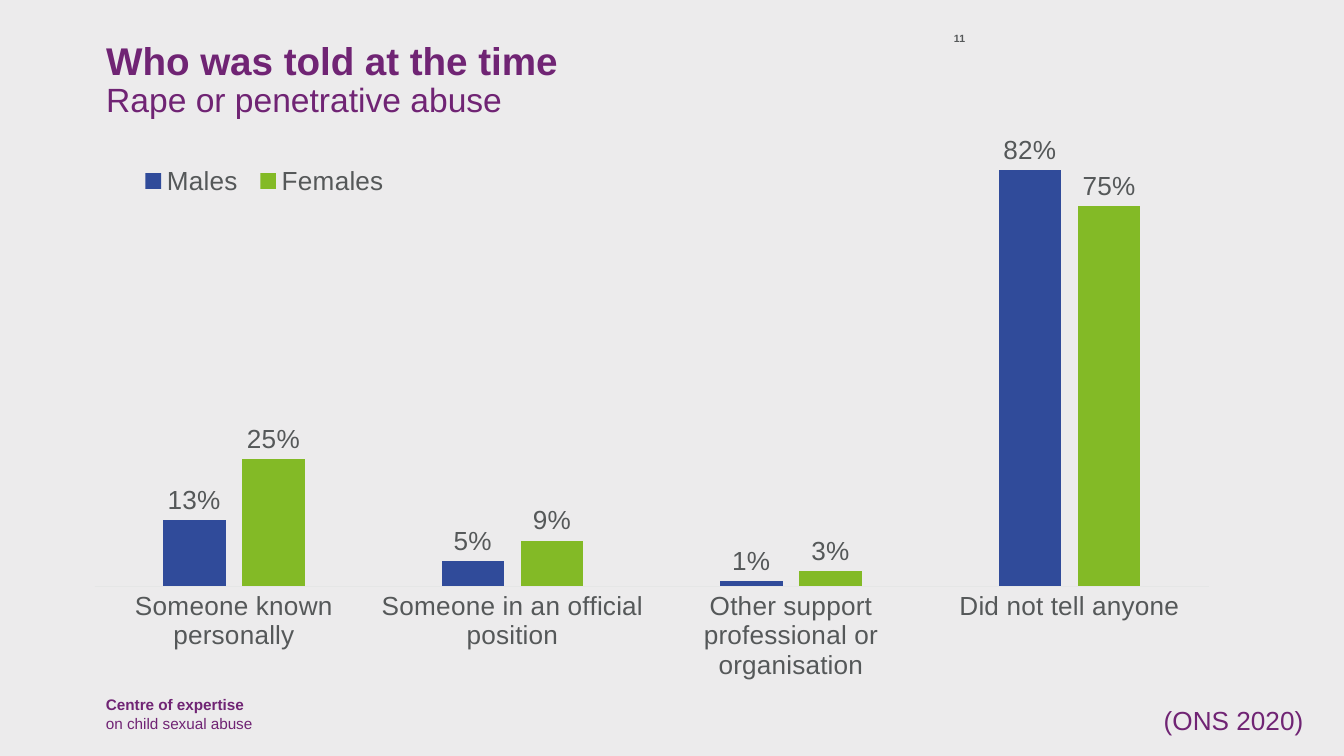
from lxml.etree import SubElement
from pptx import Presentation
from pptx.chart.data import CategoryChartData
from pptx.dml.color import RGBColor
from pptx.enum.chart import XL_CHART_TYPE, XL_LABEL_POSITION, XL_LEGEND_POSITION, XL_TICK_MARK
from pptx.enum.text import MSO_ANCHOR, MSO_AUTO_SIZE, PP_ALIGN
from pptx.oxml.ns import qn
from pptx.util import Pt

BACKGROUND = RGBColor(0xEC, 0xEB, 0xEC)
PURPLE = RGBColor(0x70, 0x24, 0x74)
GREY = RGBColor(0x55, 0x58, 0x59)
AXIS_GREY = RGBColor(0xE5, 0xE6, 0xE6)
BLUE = RGBColor(0x30, 0x4B, 0x9A)
GREEN = RGBColor(0x83, 0xBA, 0x26)
FONT = "Arial"

CATEGORIES = [
    "Someone known personally",
    "Someone in an official position",
    "Other support professional or organisation",
    "Did not tell anyone",
]
SERIES = [
    ("Males", (0.13, 0.05, 0.01, 0.82), BLUE),
    ("Females", (0.25, 0.09, 0.03, 0.75), GREEN),
]


def style_font(font, size, color, bold=False):
    font.name = FONT
    font.size = Pt(size)
    font.bold = bold
    font.color.rgb = color


def fill_text(shape, lines, color, spacing=1.0, alignment=PP_ALIGN.LEFT):
    frame = shape.text_frame
    frame.word_wrap = True
    frame.auto_size = MSO_AUTO_SIZE.NONE
    frame.vertical_anchor = MSO_ANCHOR.TOP
    frame.text = "\n".join(text for text, size, bold in lines)
    for paragraph, (text, size, bold) in zip(frame.paragraphs, lines):
        paragraph.alignment = alignment
        paragraph.line_spacing = spacing
        style_font(paragraph.runs[0].font, size, color, bold)


def add_title(slide, lines):
    title = slide.shapes.title
    title.left, title.top, title.width, title.height = Pt(49.7), Pt(18.7), Pt(602), Pt(50.4)
    fill_text(title, lines, PURPLE, spacing=0.9)


def add_text(slide, left, top, width, height, lines, color, **options):
    box = slide.shapes.add_textbox(Pt(left), Pt(top), Pt(width), Pt(height))
    fill_text(box, lines, color, **options)
    return box


def set_layout(element, left, top, width, height, inner=False):
    for old_layout in element.findall(qn("c:layout")):
        element.remove(old_layout)
    layout = SubElement(element, qn("c:layout"))
    element.remove(layout)
    element.insert(1 if element.tag == qn("c:legend") else 0, layout)
    manual = SubElement(layout, qn("c:manualLayout"))
    settings = [("layoutTarget", "inner")] if inner else []
    settings += [("xMode", "edge"), ("yMode", "edge")]
    settings += [("x", left), ("y", top), ("w", width), ("h", height)]
    for name, value in settings:
        SubElement(manual, qn(f"c:{name}")).set("val", str(value))


def format_axes(chart):
    category_axis = chart.category_axis
    category_axis.major_tick_mark = XL_TICK_MARK.NONE
    category_axis.format.line.color.rgb = AXIS_GREY
    category_axis.format.line.width = Pt(0.75)
    style_font(category_axis.tick_labels.font, 14, GREY)
    value_axis = chart.value_axis
    value_axis.minimum_scale = 0
    value_axis.maximum_scale = 0.9
    value_axis.has_major_gridlines = False
    value_axis.visible = False


def format_series(series, color):
    series.format.fill.solid()
    series.format.fill.fore_color.rgb = color
    labels = series.data_labels
    labels.show_value = True
    labels.number_format = "0%"
    labels.number_format_is_linked = False
    labels.position = XL_LABEL_POSITION.OUTSIDE_END
    style_font(labels.font, 14, GREY)


def add_column_chart(slide):
    data = CategoryChartData(number_format="0%")
    data.categories = CATEGORIES
    for name, values, color in SERIES:
        data.add_series(name, values)
    chart = slide.shapes.add_chart(
        XL_CHART_TYPE.COLUMN_CLUSTERED, Pt(39.6), Pt(56.9), Pt(619.2), Pt(334.1), data
    ).chart
    chart.has_title = False
    style_font(chart.font, 10, GREY)
    format_axes(chart)
    plot = chart.plots[0]
    plot.gap_width = 219
    plot.overlap = -27
    plot.vary_by_categories = False
    for series, (name, values, color) in zip(plot.series, SERIES):
        format_series(series, color)
    chart.has_legend = True
    legend = chart.legend
    legend.position = XL_LEGEND_POSITION.BOTTOM
    legend.include_in_layout = False
    style_font(legend.font, 14, GREY)
    plot_area = chart.element.find(".//" + qn("c:plotArea"))
    set_layout(plot_area, 0.018, 0.038, 0.964, 0.732, inner=True)
    set_layout(chart.element.find(".//" + qn("c:legend")), 0.05, 0.08, 0.23, 0.08)


def main():
    presentation = Presentation()
    presentation.slide_width = Pt(720)
    presentation.slide_height = Pt(405)
    slide = presentation.slides.add_slide(presentation.slide_layouts[5])
    slide.background.fill.solid()
    slide.background.fill.fore_color.rgb = BACKGROUND

    footer = [("Centre of expertise", 8.2, True), ("on child sexual abuse", 8.2, False)]
    add_text(slide, 49.7, 367.9, 128.9, 27.4, footer, PURPLE, spacing=1.08)
    add_title(slide, [
        ("Who was told at the time", 20.7, True),
        ("Rape or penetrative abuse", 18, False),
    ])
    number = add_text(slide, 494.6, 14.4, 27.4, 14.4, [("11", 5.6, True)], GREY,
                      alignment=PP_ALIGN.RIGHT)
    frame = number.text_frame
    frame.margin_left = frame.margin_right = Pt(5)
    frame.margin_top = frame.margin_bottom = Pt(2.9)
    add_column_chart(slide)
    add_text(slide, 616.3, 373.7, 95, 31, [("(ONS 2020)", 14, False)], PURPLE)
    presentation.save("out.pptx")


if __name__ == "__main__":
    main()
